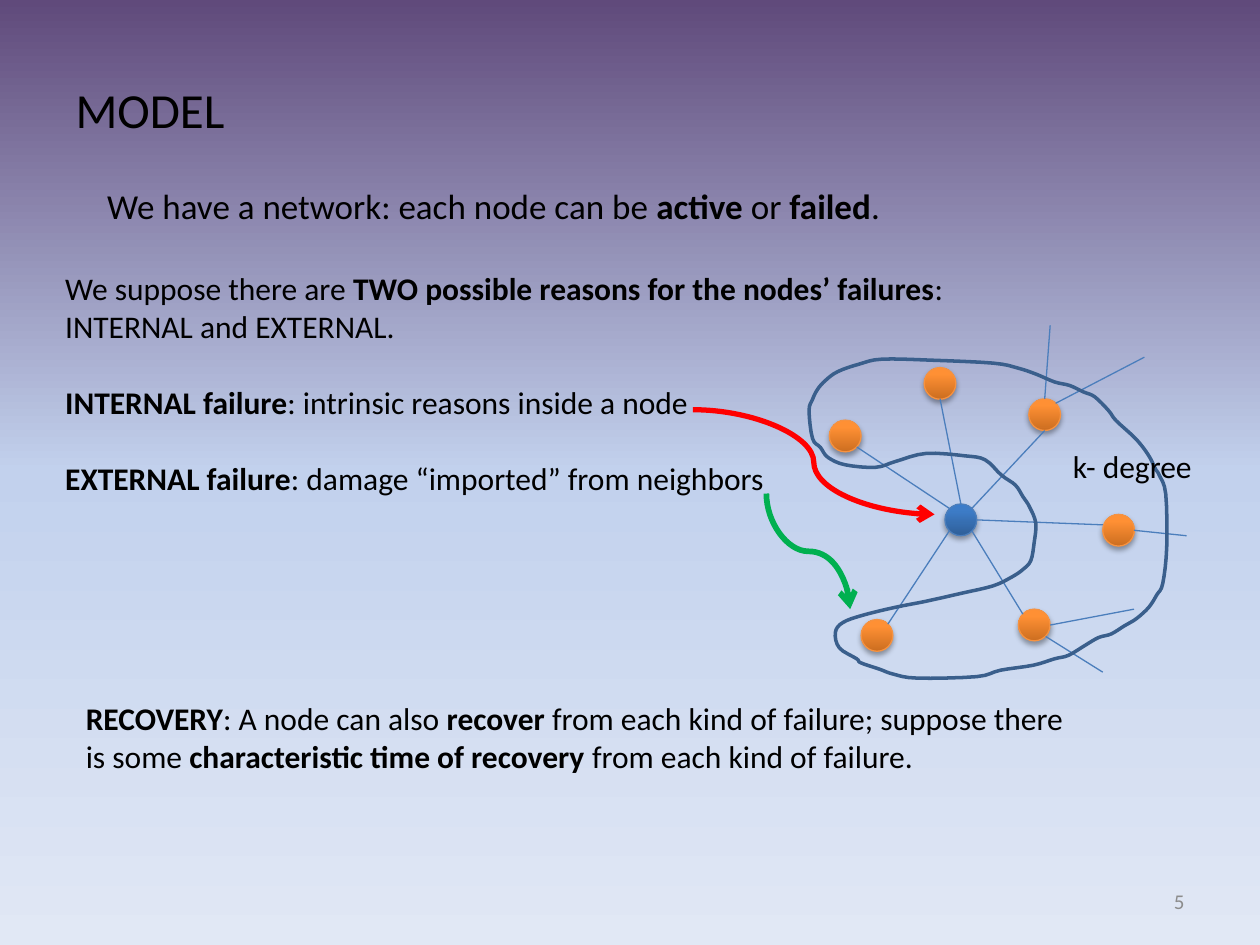
from pptx import Presentation
from pptx.dml.color import RGBColor
from pptx.enum.shapes import MSO_CONNECTOR, MSO_SHAPE
from pptx.enum.text import MSO_ANCHOR, PP_ALIGN
from pptx.oxml import parse_xml
from pptx.oxml.ns import nsdecls
from pptx.util import Cm, Pt

BACKGROUND = [(0, "604A7B"), (50, "C2D1ED"), (100, "E1E8F5")]
BLUE = [(0, "2F5F99"), (80, "3D7CC7"), (100, "3A7CCB")]
ORANGE = [(0, "CC6E20"), (80, "FF9034"), (100, "FF9136")]
NODE_SIZE = 0.64

# Left and top of each node, in cm
CENTER_NODE = (19.05, 10.16)
NEIGHBORS = [(20.53, 12.28), (20.74, 8.04), (22.23, 10.37),
             (18.63, 7.41), (16.72, 8.47), (17.36, 12.49)]

# Links to the center node, then links leaving the neighborhood
LINKS = [
    (18.95, 8.04, 19.37, 10.16), (21.06, 8.68, 19.59, 10.25),
    (17.27, 9.01, 19.14, 10.25), (17.9, 12.58, 19.14, 10.7),
    (20.62, 12.38, 19.59, 10.7), (22.23, 10.58, 19.68, 10.48),
    (21.28, 8.13, 23.07, 7.2), (21.06, 8.04, 21.17, 6.56),
    (22.86, 10.69, 23.92, 10.8), (21.08, 12.83, 22.23, 13.55),
    (21.17, 12.6, 22.86, 12.28),
]

NEIGHBORHOOD = [
    (17.65, 9.42), (18.06, 9.3), (18.67, 9.14), (19.46, 9.19), (19.86, 9.27),
    (20.19, 9.58), (20.47, 9.78), (20.62, 10.01), (20.75, 10.21), (20.88, 10.54),
    (20.85, 10.92), (20.78, 11.3), (20.62, 11.48), (20.4, 11.63), (20.02, 11.81),
    (19.38, 11.96), (18.67, 12.12), (18.06, 12.24), (17.4, 12.4), (16.99, 12.55),
    (16.84, 12.75), (16.92, 13.06), (17.27, 13.28), (17.35, 13.36), (17.73, 13.49),
    (18.01, 13.59), (18.49, 13.67), (19.69, 13.64), (20.17, 13.51), (20.83, 13.41),
    (21.26, 13.28), (21.54, 13.21), (21.89, 13), (22.15, 12.85), (22.4, 12.78),
    (22.66, 12.62), (22.91, 12.47), (23.16, 12.24), (23.32, 11.99), (23.44, 11.76),
    (23.52, 11.02), (23.5, 9.96), (23.37, 9.58), (23.29, 9.45), (23.16, 9.19),
    (22.91, 8.86), (22.5, 8.48), (22.35, 8.28), (22.07, 8), (21.84, 7.9),
    (21.56, 7.77), (21.26, 7.7), (20.88, 7.54), (20.52, 7.42), (20.02, 7.32),
    (18.75, 7.26), (17.78, 7.24), (17.32, 7.34), (16.89, 7.49), (16.64, 7.67),
    (16.48, 7.85), (16.38, 8.05), (16.31, 8.28), (16.38, 8.84), (16.54, 9.02),
    (16.69, 9.22), (17.04, 9.37),
]


def color(hex_value):
    return RGBColor.from_string(hex_value)


def smooth_loop(points, steps=4):
    """Closed Catmull-Rom curve through the points."""
    count = len(points)
    curve = []
    for i in range(count):
        corners = [points[(i + k) % count] for k in (-1, 0, 1, 2)]
        for step in range(steps):
            t = step / steps
            curve.append(tuple(
                b + t / 2 * (c - a + t * (2 * a - 5 * b + 4 * c - d
                                          + t * (3 * (b - c) + d - a)))
                for a, b, c, d in zip(*corners)))
    return curve


class SlideBuilder:
    font = "Calibri"
    ink = "000000"
    link_color = "4B7EBC"

    def __init__(self, slide):
        self.slide = slide
        self.shapes = slide.shapes

    def gradient(self, fill, element, stops, angle):
        fill.gradient()
        fill.gradient_angle = angle
        stop_list = element.xpath(".//a:gradFill/a:gsLst")[0]
        stop_list.clear()
        for percent, hex_value in stops:
            stop_list.append(parse_xml(
                f'<a:gs {nsdecls("a")} pos="{percent * 1000}">'
                f'<a:srgbClr val="{hex_value}"/></a:gs>'))

    def fill_text(self, holder, lines, size, ink=None, **paragraph_format):
        """Fill a text holder; **marks** enclose bold words."""
        frame = holder.text_frame
        frame.word_wrap = True
        frame.vertical_anchor = MSO_ANCHOR.TOP
        settings = {"alignment": PP_ALIGN.LEFT, "space_before": Pt(0), **paragraph_format}
        for i, line in enumerate(lines):
            paragraph = frame.add_paragraph() if i else frame.paragraphs[0]
            for name, value in settings.items():
                setattr(paragraph, name, value)
            for j, words in enumerate(line.split("**")):
                if words:
                    run = paragraph.add_run()
                    run.text = words
                    run.font.color.rgb = color(ink or self.ink)
                    style = {"name": self.font, "size": Pt(size), "bold": j % 2 == 1}
                    for name, value in style.items():
                        setattr(run.font, name, value)
        return frame

    def placeholder(self, holder, box, lines, size):
        for name, value in zip(("left", "top", "width", "height"), box):
            setattr(holder, name, Cm(value))
        frame = self.fill_text(holder, lines, size)
        for paragraph in frame.paragraphs:
            properties = paragraph._p.get_or_add_pPr()
            properties.set("marL", "0")
            properties.set("indent", "0")
            properties.append(parse_xml(f'<a:buNone {nsdecls("a")}/>'))
        return frame

    def text(self, box, line, size, **options):
        holder = self.shapes.add_textbox(*map(Cm, box))
        return self.fill_text(holder, [line], size, **options)

    def node(self, position, stops, outline):
        circle = self.shapes.add_shape(
            MSO_SHAPE.OVAL, *map(Cm, (*position, NODE_SIZE, NODE_SIZE)))
        self.gradient(circle.fill, circle._element, stops, 90)
        circle.line.color.rgb = color(outline)
        circle.line.width = Pt(0.75)
        circle._element.spPr.append(parse_xml(
            f'<a:effectLst {nsdecls("a")}><a:outerShdw blurRad="39400" dist="22900" '
            'dir="5400000" rotWithShape="0"><a:srgbClr val="000000">'
            '<a:alpha val="35000"/></a:srgbClr></a:outerShdw></a:effectLst>'))

    def connector(self, ends, hex_value, width, kind=MSO_CONNECTOR.STRAIGHT, arrow=False):
        link = self.shapes.add_connector(kind, *map(Cm, ends))
        link.line.color.rgb = color(hex_value)
        link.line.width = Pt(width)
        if arrow:
            link.line._get_or_add_ln().append(
                parse_xml(f'<a:tailEnd {nsdecls("a")} type="arrow"/>'))
        link._element.spPr.append(parse_xml(f'<a:effectLst {nsdecls("a")}/>'))
        return link

    def outline(self, points, hex_value, width):
        start, *rest = [(Cm(x), Cm(y)) for x, y in points]
        builder = self.shapes.build_freeform(*start)
        builder.add_line_segments(rest, close=True)
        loop = builder.convert_to_shape()
        loop.shadow.inherit = False
        loop.fill.background()
        loop.line.color.rgb = color(hex_value)
        loop.line.width = Pt(width)


def main():
    deck = Presentation()
    deck.slide_width, deck.slide_height = Cm(25.4), Cm(19.05)
    slide = deck.slides.add_slide(deck.slide_layouts[1])
    model = SlideBuilder(slide)
    model.gradient(slide.background.fill, slide.element, BACKGROUND, 270)

    # Title and text
    title, reasons = slide.placeholders
    model.placeholder(title, (1.27, 1.48, 23.28, 1.45), ["MODEL"], 28)
    model.text((1.91, 3.6, 19.05, 1.11),
               "We have a network: each node can be **active** or **failed**.", 20)
    reasons_frame = model.placeholder(reasons, (1.06, 5.29, 23.7, 5.64), [
        "We suppose there are **TWO possible reasons for the nodes’ failures**:",
        "INTERNAL and EXTERNAL.",
        "**INTERNAL failure**: intrinsic reasons inside a node",
        "**EXTERNAL failure**: damage “imported” from neighbors",
    ], 18)
    for failure in reasons_frame.paragraphs[2:]:
        failure.space_before = Pt(22)
    model.text((1.48, 13.97, 20.53, 1.8),
               "**RECOVERY**: A node can also **recover** from each kind of failure; "
               "suppose there is some **characteristic time of recovery **"
               "from each kind of failure.", 18)

    # Network
    model.node(CENTER_NODE, BLUE, model.link_color)
    for neighbor in NEIGHBORS:
        model.node(neighbor, ORANGE, "F69240")
    for ends in LINKS:
        model.connector(ends, model.link_color, 0.75)
    model.outline(smooth_loop(NEIGHBORHOOD), "3A5F8C", 2)
    model.text((21.38, 8.89, 4.02, 1.03), "k- degree", 18)

    # Arrows from the failure kinds to the network
    model.connector((13.97, 8.26, 18.84, 10.37), "FF0000", 3, MSO_CONNECTOR.CURVE, True)
    external = model.connector((15.13, 10.27, 17.46, 11.96), "00B050", 3.25,
                               MSO_CONNECTOR.CURVE, True)
    external._element.spPr.xfrm.set("rot", "16200000")
    external._element.spPr.xfrm.set("flipH", "1")

    # Slide number
    number = model.text((18.2, 17.66, 5.93, 1.01), "5", 12, ink="8C8C8C",
                        alignment=PP_ALIGN.RIGHT)
    number.vertical_anchor = MSO_ANCHOR.MIDDLE

    deck.save("out.pptx")


if __name__ == "__main__":
    main()
